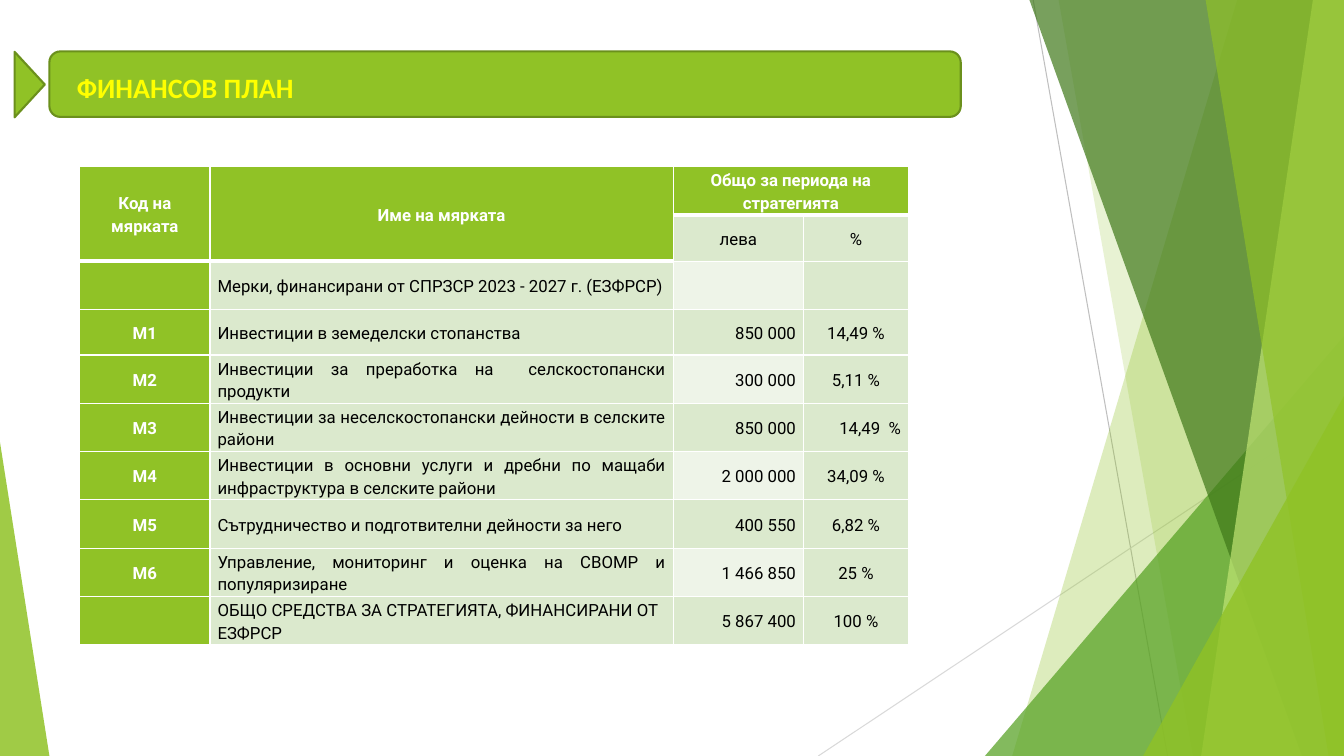
"""Build the financial plan slide with its table of measures."""
from lxml import etree
from pptx import Presentation
from pptx import util as u
from pptx.dml.color import RGBColor
from pptx.enum import shapes, text
from pptx.oxml import ns

W, H, TOP = 960, 540, -0.72
GREEN, EDGE, PALE, PALER = "90C226", "6B901C", "DBE9CD", "EEF4E8"
WHITE, BLACK, YELLOW = "FFFFFF", "000000", "FFFF00"

THIN_LINES = [((738, 0), (834, H), "BFBFBF"), ((W, 290), (584.5, H), "D9D9D9")]
BANDS = [
    ("band", 884.16, 722.88, GREEN, 30),
    ("band", 756, 851.76, GREEN, 20),
    ("triangle", (703.5, 240, 256.5, 300), 1, "54A021", 72),
    ("band", 735.12, 929.52, "3F7819", 70),
    ("band", 938.16, 858.24, "C0E474", 70),
    ("band", 861.12, 948.96, GREEN, 65),
    ("triangle", (816.5, 283, 143.5, 257), 1, GREEN, 80),
    ("triangle", (0, 316, 35.3, 224), 0, GREEN, 85),
]
TITLE = [(" ", 24), ("ФИНАНСОВ ПЛАН", 20)]
TITLE_BAR = (35.3, 36.7, 651, 46.8)
TITLE_BOX = (42.5, 42.5, 737, 36)
POINTER = (-2.2, 49.6, 46.8, 21.6)

TABLE_AT = (57, 119)
COLS = [93, 331, 93, 75]
ROWS = [34.5, 33, 34.5, 32.4] + [34.5] * 6
CELLS = [
    ("Код на мярката", "Име на мярката", "Общо за периода на стратегията", ""),
    ("", "", "лева", "%"),
    ("", "Мерки, финансирани от СПРЗСР 2023 - 2027 г. (ЕЗФРСР)", "", ""),
    ("М1", "Инвестиции в земеделски стопанства", "850 000", "14,49 %"),
    ("М2", "Инвестиции за преработка на  селскостопански продукти", "300 000", "5,11 %"),
    ("М3", "Инвестиции за неселскостопански дейности в селските райони", "850 000", "14,49  %"),
    ("М4", "Инвестиции в основни услуги и дребни по мащаби инфраструктура в селските райони",
     "2 000 000", "34,09 %"),
    ("М5", "Сътрудничество и подготвителни дейности за него", "400 550", "6,82 %"),
    ("М6", "Управление, мониторинг и оценка на СВОМР и популяризиране", "1 466 850", "25 %"),
    ("", "ОБЩО СРЕДСТВА ЗА СТРАТЕГИЯТА, ФИНАНСИРАНИ ОТ ЕЗФРСР", "5 867 400", "100 %"),
]
MERGES = [((0, 0), (1, 0)), ((0, 1), (1, 1)), ((0, 2), (0, 3))]
AL = text.PP_ALIGN
COL_ALIGN = [AL.CENTER, AL.JUSTIFY, AL.RIGHT, AL.CENTER]
ALIGN = {(5, 3): AL.RIGHT, (9, 1): AL.LEFT}
CELL_FORMAT = dict(vertical_anchor=text.MSO_ANCHOR.MIDDLE, margin_left=u.Pt(5.4),
                   margin_right=u.Pt(5.4), margin_top=0, margin_bottom=0)
FLAGS = dict(first_row=False, horz_banding=False)


def rgb(value):
    return RGBColor.from_string(value)


def pts(values):
    return [u.Pt(v) for v in values]


def apply(obj, values):
    for name, value in values.items():
        setattr(obj, name, value)


def paint(sp, fill, alpha=None, line=None):
    sp.shadow.inherit = False
    sp.fill.solid()
    sp.fill.fore_color.rgb = rgb(fill)
    if alpha is not None:
        color = sp.fill._xPr.find(".//" + ns.qn("a:srgbClr"))
        etree.SubElement(color, ns.qn("a:alpha"), val=str(alpha * 1000))
    if line:
        sp.line.color.rgb = rgb(line)
        sp.line.width = u.Pt(1.5)
    else:
        sp.line.fill.background()


def add_run(p, content, font, size, color, bold):
    r = p.add_run()
    r.text = content
    apply(r.font, dict(name=font, size=u.Pt(size), bold=bold))
    r.font.color.rgb = rgb(color)


def add_background(s):
    for start, end, color in THIN_LINES:
        line = s.shapes.add_connector(shapes.MSO_CONNECTOR.STRAIGHT, *pts(start + end))
        line.line.color.rgb = rgb(color)
        line.line.width = u.Pt(0.75)
        etree.SubElement(line._element.spPr, ns.qn("a:effectLst"))
    for kind, place, foot, color, alpha in BANDS:
        if kind == "band":
            fb = s.shapes.build_freeform(place, TOP, scale=u.Pt(1))
            fb.add_line_segments([(W, TOP), (W, H), (foot, H)], close=True)
            sp = fb.convert_to_shape()
        else:
            sp = s.shapes.add_shape(shapes.MSO_SHAPE.ISOSCELES_TRIANGLE, *pts(place))
            sp.adjustments[0] = foot
        paint(sp, color, alpha)


def add_title(s):
    bar = s.shapes.add_shape(shapes.MSO_SHAPE.ROUNDED_RECTANGLE, *pts(TITLE_BAR))
    paint(bar, GREEN, line=EDGE)
    box = s.shapes.add_textbox(*pts(TITLE_BOX))
    box.text_frame.word_wrap = True
    for content, size in TITLE:
        add_run(box.text_frame.paragraphs[0], content, "Calibri", size, YELLOW, True)
    pointer = s.shapes.add_shape(shapes.MSO_SHAPE.ISOSCELES_TRIANGLE, *pts(POINTER))
    pointer.rotation = 90
    paint(pointer, GREEN, line=EDGE)


def edge_width(row, col):
    return 3 if row == (1 if col < 2 else 0) else 1


def add_borders(cell, row, col):
    widths = dict(lnL=1, lnR=1, lnT=edge_width(row - 1, col), lnB=edge_width(row, col))
    tc_pr = cell._tc.get_or_add_tcPr()
    for i, (tag, width) in enumerate(widths.items()):
        ln = etree.Element(ns.qn("a:" + tag), w=str(u.Pt(width)))
        fill = etree.SubElement(ln, ns.qn("a:solidFill"))
        etree.SubElement(fill, ns.qn("a:srgbClr"), val=WHITE)
        tc_pr.insert(i, ln)


def add_plan_table(s):
    frame = s.shapes.add_table(len(ROWS), len(COLS), *pts(TABLE_AT + (sum(COLS), sum(ROWS))))
    table = frame.table
    apply(table, FLAGS)
    for column, width in zip(table.columns, COLS):
        column.width = u.Pt(width)
    for row, height in zip(table.rows, ROWS):
        row.height = u.Pt(height)
    for first, last in MERGES:
        table.cell(*first).merge(table.cell(*last))
    for i, values in enumerate(CELLS):
        for j, content in enumerate(values):
            cell = table.cell(i, j)
            head = i == 0 or j == 0 or (i, j) == (1, 1)
            pale = PALER if j == 2 and i in range(2, 9, 2) else PALE
            apply(cell, CELL_FORMAT)
            cell.fill.solid()
            cell.fill.fore_color.rgb = rgb(GREEN if head else pale)
            add_borders(cell, i, j)
            if content:
                p = cell.text_frame.paragraphs[0]
                align = AL.CENTER if i < 2 else ALIGN.get((i, j), COL_ALIGN[j])
                apply(p, dict(alignment=align, line_spacing=1.15, space_after=u.Pt(8)))
                add_run(p, content, "Roboto", 12, WHITE if head else BLACK, head)


def main():
    prs = Presentation()
    apply(prs, dict(slide_width=u.Pt(W), slide_height=u.Pt(H)))
    s = prs.slides.add_slide(prs.slide_layouts[6])
    add_background(s)
    add_title(s)
    add_plan_table(s)
    prs.save("out.pptx")


if __name__ == "__main__":
    main()
